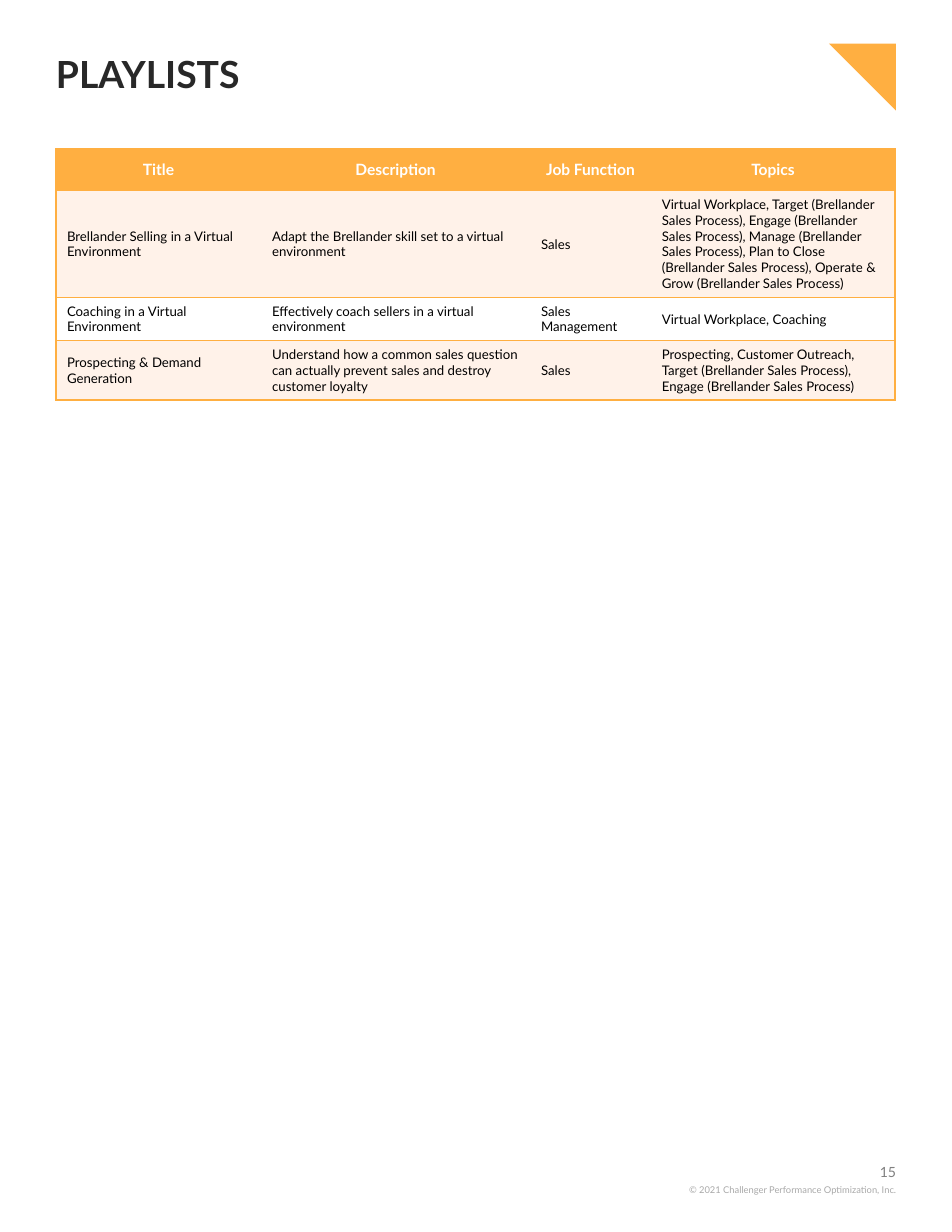
"""Build the playlists page: title, corner accent, playlist table and footer."""
from lxml.etree import SubElement
from pptx import Presentation
from pptx.dml.color import RGBColor
from pptx.enum.text import MSO_ANCHOR as Anchor, PP_ALIGN as Align
from pptx.oxml.ns import qn
from pptx.util import Cm, Pt

ORANGE = RGBColor(0xFF, 0xAF, 0x41)
PEACH = RGBColor(0xFF, 0xF2, 0xE9)
WHITE = RGBColor(0xFF, 0xFF, 0xFF)
BLACK = RGBColor(0x00, 0x00, 0x00)
CHARCOAL = RGBColor(0x28, 0x28, 0x28)
GRAY = RGBColor(0x80, 0x80, 0x80)
LIGHT_GRAY = RGBColor(0xA9, 0xA9, 0xA9)


def write_text(frame, text, size, color, bold=False, align=Align.LEFT, spacing=None):
    frame.word_wrap = True
    paragraph = frame.paragraphs[0]
    paragraph.alignment = align
    paragraph.line_spacing = spacing
    run = paragraph.add_run()
    run.text = text
    run.font.name = "Lato"
    run.font.size = Pt(size)
    run.font.bold = bold
    run.font.color.rgb = color


def add_border(cell, side, color=None):
    line = SubElement(cell._tc.get_or_add_tcPr(), qn(f"a:ln{side}"), w=str(Pt(1)))
    if color is None:
        SubElement(line, qn("a:noFill"))
    else:
        fill = SubElement(line, qn("a:solidFill"))
        SubElement(fill, qn("a:srgbClr"), val=str(color))


presentation = Presentation()
presentation.slide_width = Cm(21.59)
presentation.slide_height = Cm(27.94)
slide = presentation.slides.add_slide(presentation.slide_layouts[6])

builder = slide.shapes.build_freeform(Cm(18.8), Cm(0.99))
builder.add_line_segments([(Cm(20.32), Cm(0.99)), (Cm(20.32), Cm(2.51))], close=True)
corner = builder.convert_to_shape()
corner.shadow.inherit = False
corner.fill.solid()
corner.fill.fore_color.rgb = ORANGE
corner.line.fill.background()

labels = [
    ((1.27, 1.27, 17.35, 0.91), Anchor.TOP, "PLAYLISTS",
     dict(size=24, color=CHARCOAL, bold=True, spacing=0.9)),
    ((19, 26.39, 1.32, 0.38), Anchor.MIDDLE, "15",
     dict(size=9, color=GRAY, align=Align.RIGHT)),
    ((14.53, 26.85, 5.79, 0.25), Anchor.MIDDLE,
     "© 2021 Challenger Performance Optimization, Inc.",
     dict(size=6, color=LIGHT_GRAY, align=Align.RIGHT)),
]
for box, anchor, text, style in labels:
    frame = slide.shapes.add_textbox(*map(Cm, box)).text_frame
    frame.margin_left = frame.margin_right = frame.margin_top = frame.margin_bottom = 0
    frame.vertical_anchor = anchor
    write_text(frame, text, **style)

rows = [
    ("Title", "Description", "Job Function", "Topics"),
    ("Brellander Selling in a Virtual Environment",
     "Adapt the Brellander skill set to a virtual environment",
     "Sales",
     "Virtual Workplace, Target (Brellander Sales Process), "
     "Engage (Brellander Sales Process), Manage (Brellander Sales Process), "
     "Plan to Close (Brellander Sales Process), "
     "Operate & Grow (Brellander Sales Process)"),
    ("Coaching in a Virtual Environment",
     "Effectively coach sellers in a virtual environment",
     "Sales Management",
     "Virtual Workplace, Coaching"),
    ("Prospecting & Demand Generation",
     "Understand how a common sales question can actually prevent sales "
     "and destroy customer loyalty",
     "Sales",
     "Prospecting, Customer Outreach, Target (Brellander Sales Process), "
     "Engage (Brellander Sales Process)"),
]
column_widths = [4.65, 6.1, 2.74, 5.54]
row_heights = [0.94, 2.41, 0.97, 1.35]
row_fills = [ORANGE, PEACH, WHITE, PEACH]
header_style = dict(size=10, color=WHITE, bold=True, align=Align.CENTER)
body_style = dict(size=8.5, color=BLACK)

table = slide.shapes.add_table(
    len(rows), len(column_widths), Cm(1.27), Cm(3.38),
    Cm(sum(column_widths)), Cm(sum(row_heights))).table
for column, width in zip(table.columns, column_widths):
    column.width = Cm(width)
for row, height in zip(table.rows, row_heights):
    row.height = Cm(height)

last_column = len(column_widths) - 1
for row_index, texts in enumerate(rows):
    is_header = row_index == 0
    for column_index, text in enumerate(texts):
        cell = table.cell(row_index, column_index)
        add_border(cell, "L", ORANGE if column_index == 0 else None)
        add_border(cell, "R", ORANGE if column_index == last_column else None)
        add_border(cell, "T", ORANGE)
        add_border(cell, "B", ORANGE)
        cell.fill.solid()
        cell.fill.fore_color.rgb = row_fills[row_index]
        cell.vertical_anchor = Anchor.MIDDLE
        cell.margin_left = cell.margin_right = Cm(0.25)
        cell.margin_top = cell.margin_bottom = Cm(0.25 if is_header else 0.13)
        write_text(cell.text_frame, text, **(header_style if is_header else body_style))

presentation.save("out.pptx")
